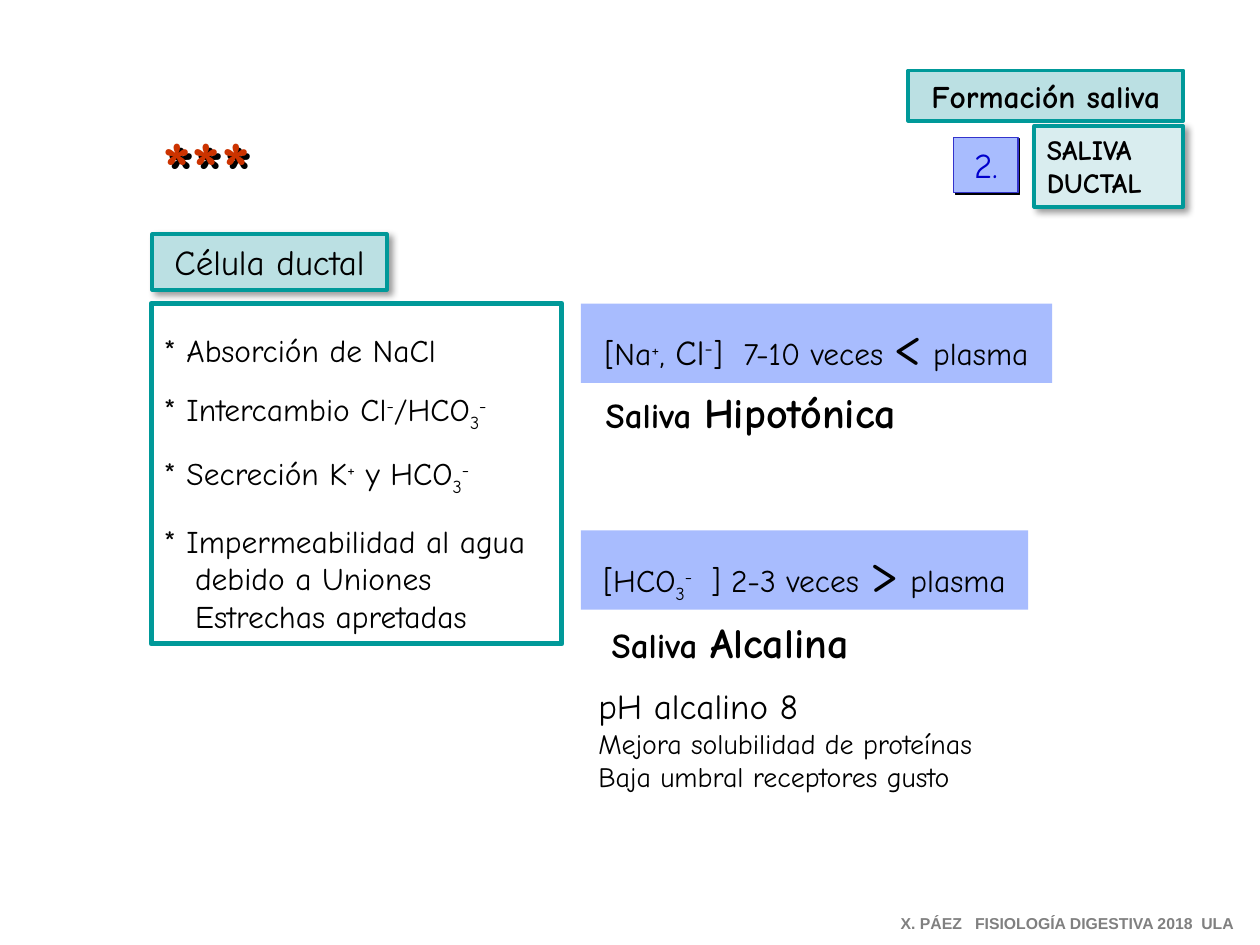
from dataclasses import dataclass

from lxml.etree import SubElement
from pptx import Presentation
from pptx.dml.color import RGBColor as Rgb
from pptx.enum.shapes import MSO_SHAPE as Form
from pptx.enum.text import MSO_ANCHOR as Anchor, MSO_AUTO_SIZE as Fit, PP_ALIGN as Align
from pptx.oxml.ns import qn
from pptx.util import Inches, Pt


@dataclass(frozen=True)
class Theme:
    font: str = "Comic Neue"
    plain: str = "Arial"
    black: str = "000000"
    red: str = "CC3300"
    teal: str = "009999"
    mint: str = "BBE0E3"
    pale: str = "D9EDEF"
    sky: str = "A8BCFE"
    edge: str = "3333CC"
    blue: str = "0000CC"
    gray: str = "808080"
    stars: int = 44
    sign: int = 32
    key: int = 24
    head: int = 20
    body: int = 18
    note: int = 16
    foot: int = 9


T = Theme()
UP, DOWN = 30, -25
# opacity %, blur, distance
SOFT = (40, 4, 3)
HARD = (100, 0, 1.4)
DEEP = (100, 0, 3)


def cast(shape, shade):
    """Give the shape a black shadow to the lower right, or none."""
    shape.shadow.inherit = False
    if not shade:
        return
    alpha, blur, dist = shade
    effects = shape._element.spPr.find(qn("a:effectLst"))
    outer = SubElement(effects, qn("a:outerShdw"), blurRad=str(Pt(blur)),
                       dist=str(Pt(dist)), dir=str(45 * 60000), algn="tl", rotWithShape="0")
    color = SubElement(outer, qn("a:srgbClr"), val=T.black)
    SubElement(color, qn("a:alpha"), val=str(alpha * 1000))


def fill_line(para, parts, size, color, bold, font):
    """Write one paragraph; a part is a text or (text, size, baseline)."""
    for part in parts:
        text, own, base = (part, None, 0) if isinstance(part, str) else part
        run = para.add_run()
        run.text = text
        face = run.font
        face.name, face.size, face.bold = font, Pt(own or size), bold
        face.color.rgb = Rgb.from_string(color)
        if base:
            face._element.set("baseline", str(base * 1000))


def write(shape, lines, size, color=T.black, bold=False, font=T.font,
          align=Align.LEFT, wrap=False):
    frame = shape.text_frame
    frame.word_wrap = wrap
    frame.auto_size = Fit.SHAPE_TO_FIT_TEXT
    frame.vertical_anchor = Anchor.TOP
    for i, parts in enumerate(lines):
        para = frame.paragraphs[0] if i == 0 else frame.add_paragraph()
        para.alignment = align
        fill_line(para, parts, size, color, bold, font)
    return frame


def box(slide, at, fill=None, line=None, width=2.25, shade=None):
    shape = slide.shapes.add_shape(Form.RECTANGLE, *map(Inches, at))
    if fill:
        shape.fill.solid()
        shape.fill.fore_color.rgb = Rgb.from_string(fill)
    else:
        shape.fill.background()
    if line:
        shape.line.color.rgb = Rgb.from_string(line)
        shape.line.width = Pt(width)
    else:
        shape.line.fill.background()
    cast(shape, shade)
    return shape


def label(slide, at):
    return slide.shapes.add_textbox(*map(Inches, at))


def cell_list(slide):
    minus, three = ("-", None, UP), ("3", None, DOWN)
    lines = [
        ["* Absorción de NaCl"],
        ["* Intercambio Cl", minus, "/HCO", three, minus],
        ["* Secreción K", ("+", None, UP), " y HCO", three, minus],
        ["* Impermeabilidad al agua"],
        ["debido a Uniones"],
        ["Estrechas apretadas"],
    ]
    shape = box(slide, (1.2, 2.41, 3.26, 2.7), line=T.teal, width=3)
    frame = write(shape, lines, T.body)
    frame.margin_top = Inches(0.22)
    paras = frame.paragraphs
    for para, gap in zip(paras[1:4], (12, 12, 14)):
        para.space_before = Pt(gap)
    for para in paras[4:]:
        para._p.get_or_add_pPr().set("marL", str(Inches(0.25)))


def level(slide, at, parts):
    write(box(slide, at, T.sky), [parts], T.body, align=Align.CENTER)


def result(slide, at, word):
    write(label(slide, at), [["Saliva ", (word, T.key, 0)]], T.head,
          bold=True, align=Align.CENTER)


def header(slide):
    stars = label(slide, (0.96, 0.9, 1.36, 0.84))
    cast(stars, DEEP)
    write(stars, [["***"]], T.stars, T.red, True, align=Align.CENTER, wrap=True)
    write(box(slide, (8.21, 1, 1.18, 0.64), T.pale, T.teal, shade=SOFT),
          [["SALIVA"], ["DUCTAL"]], T.note, bold=True)
    write(box(slide, (7.57, 1.09, 0.51, 0.44), T.sky, T.edge, 0.75, HARD),
          [["2."]], T.head, T.blue, align=Align.CENTER, wrap=True)
    write(box(slide, (7.21, 0.56, 2.18, 0.4), T.mint, T.teal),
          [["Formación saliva"]], T.body, bold=True, align=Align.CENTER)
    write(box(slide, (1.21, 1.86, 1.86, 0.44), T.mint, T.teal, shade=SOFT),
          [["Célula ductal"]], T.head, align=Align.CENTER)


def main():
    deck = Presentation()
    deck.slide_width, deck.slide_height = Inches(10), Inches(7.5)
    slide = deck.slides.add_slide(deck.slide_layouts[6])
    header(slide)
    cell_list(slide)
    level(slide, (4.61, 2.41, 3.74, 0.63),
          ["[Na", ("+", None, UP), ", ", ("Cl", T.head, 0), ("-", T.head, UP),
           "]  7-10 veces ", ("<", T.sign, 0), " plasma"])
    level(slide, (4.61, 4.21, 3.55, 0.63),
          ["[HCO", ("3", None, DOWN), ("-   ", None, UP),
           "] 2-3 veces ", (">", T.sign, 0), " plasma"])
    result(slide, (4.56, 3.02, 2.8, 0.5), "Hipotónica")
    result(slide, (4.61, 4.84, 2.37, 0.5), "Alcalina")
    write(label(slide, (4.65, 5.38, 3.46, 0.97)),
          [[("pH alcalino 8", T.head, 0)], ["Mejora solubilidad de proteínas"],
           ["Baja umbral receptores gusto"]], T.note)
    write(label(slide, (7.05, 7.2, 2.86, 0.25)),
          [["X. PÁEZ   FISIOLOGÍA DIGESTIVA 2018  ULA"]],
          T.foot, T.gray, True, T.plain)
    deck.save("out.pptx")


if __name__ == "__main__":
    main()
